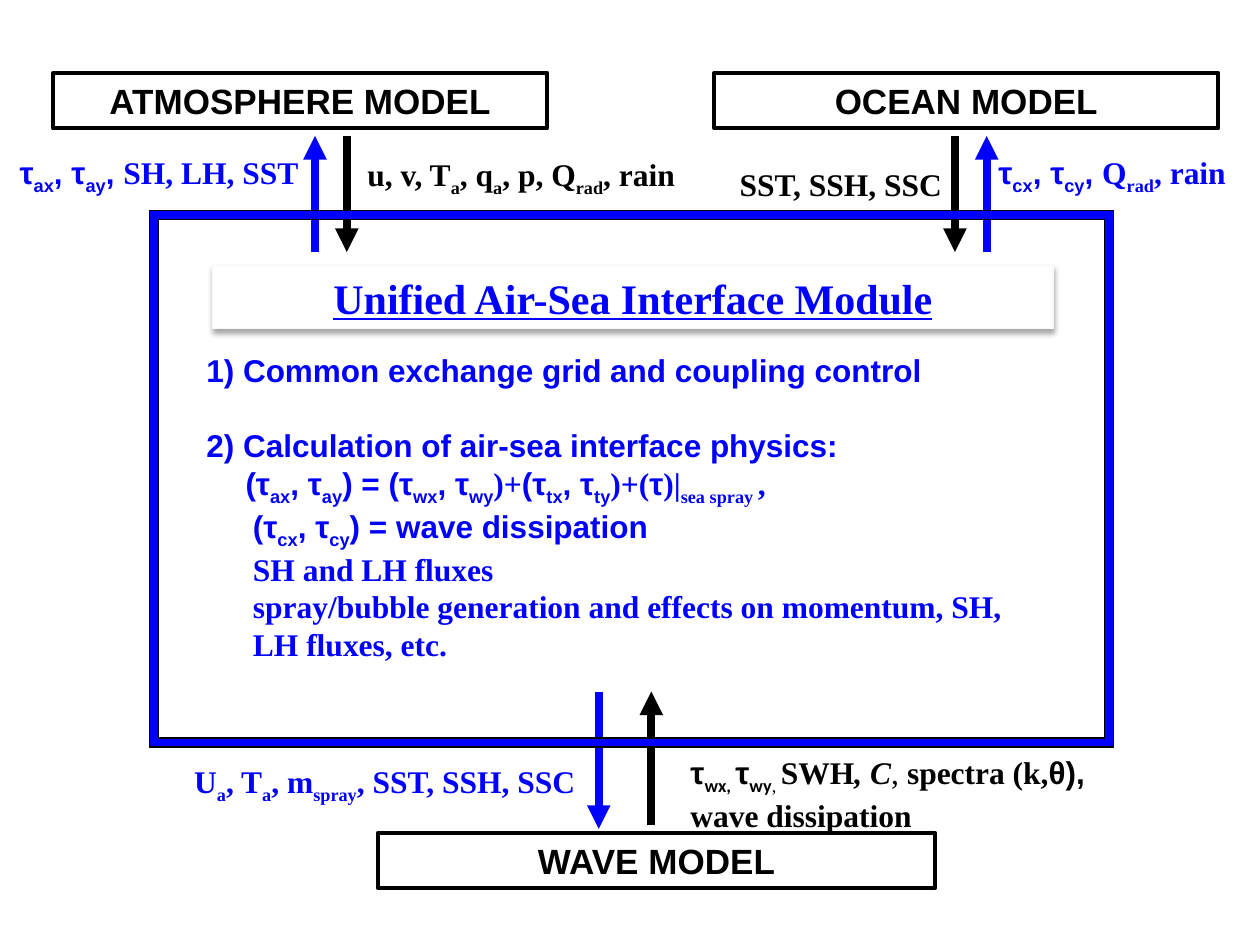
from dataclasses import dataclass

from lxml import etree
from pptx import Presentation
from pptx import util as u
from pptx.dml.color import RGBColor
from pptx.enum import shapes, text
from pptx.oxml import parse_xml
from pptx.oxml.ns import qn

Cm, Pt = u.Cm, u.Pt


@dataclass(frozen=True)
class Theme:
    blue: RGBColor = RGBColor(0, 0, 255)
    black: RGBColor = RGBColor(0, 0, 0)
    white: RGBColor = RGBColor(255, 255, 255)
    pale: RGBColor = RGBColor(249, 249, 249)
    sans: str = "Arial"
    serif: str = "Times New Roman"
    small: str = "Calibri"
    body: int = 18
    model: int = 20
    title: int = 24


T = Theme()
SHADOW = (
    '<a:effectLst xmlns:a="http://schemas.openxmlformats.org/drawingml/2006/main">'
    '<a:outerShdw blurRad="40000" dist="23000" dir="5400000" rotWithShape="0">'
    '<a:srgbClr val="000000"><a:alpha val="35000"/></a:srgbClr>'
    '</a:outerShdw></a:effectLst>'
)


def style(run, font, size, color, bold=True, slant=False):
    run.font.name = font
    run.font.size = Pt(size)
    run.font.bold = bold
    run.font.italic = slant
    run.font.color.rgb = color


def write(para, parts, color):
    # Text between tildes is set as a subscript.
    for font, words, *flags in parts:
        for i, piece in enumerate(words.split("~")):
            if not piece:
                continue
            run = para.add_run()
            run.text = piece
            style(run, font, T.body, color, "plain" not in flags, "slant" in flags)
            if i % 2:
                run._r.get_or_add_rPr().set("baseline", "-25000")


def label(slide, box, lines, color, align=text.PP_ALIGN.CENTER):
    frame = slide.shapes.add_textbox(*map(Cm, box)).text_frame
    frame.word_wrap = True
    for i, parts in enumerate(lines):
        para = frame.add_paragraph() if i else frame.paragraphs[0]
        para.alignment = align
        write(para, parts, color)
    return frame


def panel(slide, kind, box, fill, line, width):
    shape = slide.shapes.add_shape(kind, *map(Cm, box))
    shape.shadow.inherit = False
    if fill is None:
        shape.fill.background()
    else:
        shape.fill.solid()
        shape.fill.fore_color.rgb = fill
    shape.line.color.rgb = line
    shape.line.width = Pt(width)
    return shape


def caption(shape, words, font, size, color):
    frame = shape.text_frame
    frame.word_wrap = True
    frame.vertical_anchor = text.MSO_ANCHOR.TOP
    frame.text = words
    para = frame.paragraphs[0]
    para.alignment = text.PP_ALIGN.CENTER
    style(para.runs[0], font, size, color)
    return para.runs[0]


def model(slide, left, top, width, words):
    shape = panel(slide, shapes.MSO_SHAPE.RECTANGLE, (left, top, width, 1.12),
                  None, T.black, 2.25)
    caption(shape, words, T.sans, T.model, T.black)


def arrow(slide, x, start, end, color):
    line = slide.shapes.add_connector(
        shapes.MSO_CONNECTOR.STRAIGHT, Cm(x), Cm(start), Cm(x), Cm(end))
    line.line.color.rgb = color
    line.line.width = Pt(4.5)
    etree.SubElement(line.line._get_or_add_ln(), qn("a:tailEnd"), type="triangle")
    etree.SubElement(line._element.spPr, qn("a:effectLst"))


def physics(slide):
    lines = [
        [(T.sans, "1) Common exchange grid and coupling control")],
        [(T.sans, "2) Calculation of air-sea interface physics:")],
        [(T.sans, "(τ~ax~, τ~ay~) = (τ~wx~, τ~wy~"), (T.serif, ")+"),
         (T.sans, "(τ~tx~, τ~ty~"), (T.serif, ")+("), (T.sans, "τ"),
         (T.serif, ")|~sea spray ~,")],
        [(T.sans, "(τ~cx~, τ~cy~) = wave dissipation")],
        [(T.serif, "SH and LH fluxes")],
        [(T.serif, "spray/bubble generation and effects on momentum, SH, "
                   "LH fluxes, etc.")],
    ]
    frame = label(slide, (3.91, 6.96, 17.6, 7.19), lines, T.blue,
                  text.PP_ALIGN.LEFT)
    hangs = (-0.94, -0.94, -0.15, 0, 0, 0)
    for para, hang in zip(frame.paragraphs, hangs):
        props = para._p.get_or_add_pPr()
        props.set("marL", str(Cm(0.94)))
        props.set("indent", str(Cm(hang)))
    frame.paragraphs[1].space_before = Pt(21)


def title(slide):
    shape = panel(slide, shapes.MSO_SHAPE.RECTANGLE, (4.29, 5.36, 16.94, 1.27),
                  T.white, T.pale, 0.75)
    props = shape._element.spPr
    props.replace(props.find(qn("a:effectLst")), parse_xml(SHADOW))
    run = caption(shape, "Unified Air-Sea Interface Module", T.serif, T.title, T.blue)
    run.font.underline = True


def border(slide):
    shape = panel(slide, shapes.MSO_SHAPE.FRAME, (3.02, 4.24, 19.43, 10.82),
                  T.blue, T.black, 0.75)
    shape.adjustments[0] = 0.017


def main():
    deck = Presentation()
    deck.slide_width, deck.slide_height = Cm(25.4), Cm(19.05)
    slide = deck.slides.add_slide(deck.slide_layouts[6])

    model(slide, 1.07, 1.47, 9.96, "ATMOSPHERE MODEL")
    model(slide, 14.4, 1.47, 10.16, "OCEAN MODEL")
    model(slide, 7.62, 16.79, 11.23, "WAVE MODEL")

    high, low = 2.74, 5.08
    for up, down in ((6.35, 6.99), (19.89, 19.25)):
        arrow(slide, up, low, high, T.blue)
        arrow(slide, down, high, low, T.black)
    arrow(slide, 12.07, 13.94, 16.71, T.blue)
    arrow(slide, 13.13, 16.64, 13.94, T.black)

    label(slide, (-0.43, 2.97, 7.42, 1.02),
          [[(T.sans, "τ~ax~, τ~ay~, "), (T.serif, "SH, LH, SST ")]], T.blue)
    label(slide, (6.99, 3, 7.19, 1.02),
          [[(T.serif, "u, v, T~a~, q~a~, p, Q~rad~, rain ")]], T.black)
    label(slide, (14.17, 3.2, 5.72, 1.02),
          [[(T.serif, "SST, SSH, SSC ")]], T.black)
    label(slide, (19.48, 2.97, 5.72, 1.02),
          [[(T.serif, " "), (T.sans, "τ~cx~, τ~cy~, "),
            (T.serif, "Q~rad~, rain")]], T.blue)
    label(slide, (3.45, 15.24, 8.61, 1.02),
          [[(T.serif, "U~a~, T~a~, m~spray~, SST, SSH, SSC")]], T.blue)
    label(slide, (13.67, 15.06, 10.8, 1.8),
          [[(T.sans, "τ"), (T.small, "~wx, ~"), (T.sans, "τ"), (T.small, "~wy~"),
            (T.serif, "~, ~", "plain"), (T.serif, "SWH"), (T.serif, ", C", "slant"),
            (T.serif, ", ", "plain"), (T.serif, "spectra (k,"), (T.sans, "θ),")],
           [(T.serif, "wave dissipation")]], T.black, text.PP_ALIGN.LEFT)

    physics(slide)
    title(slide)
    border(slide)
    deck.save("out.pptx")


if __name__ == "__main__":
    main()
